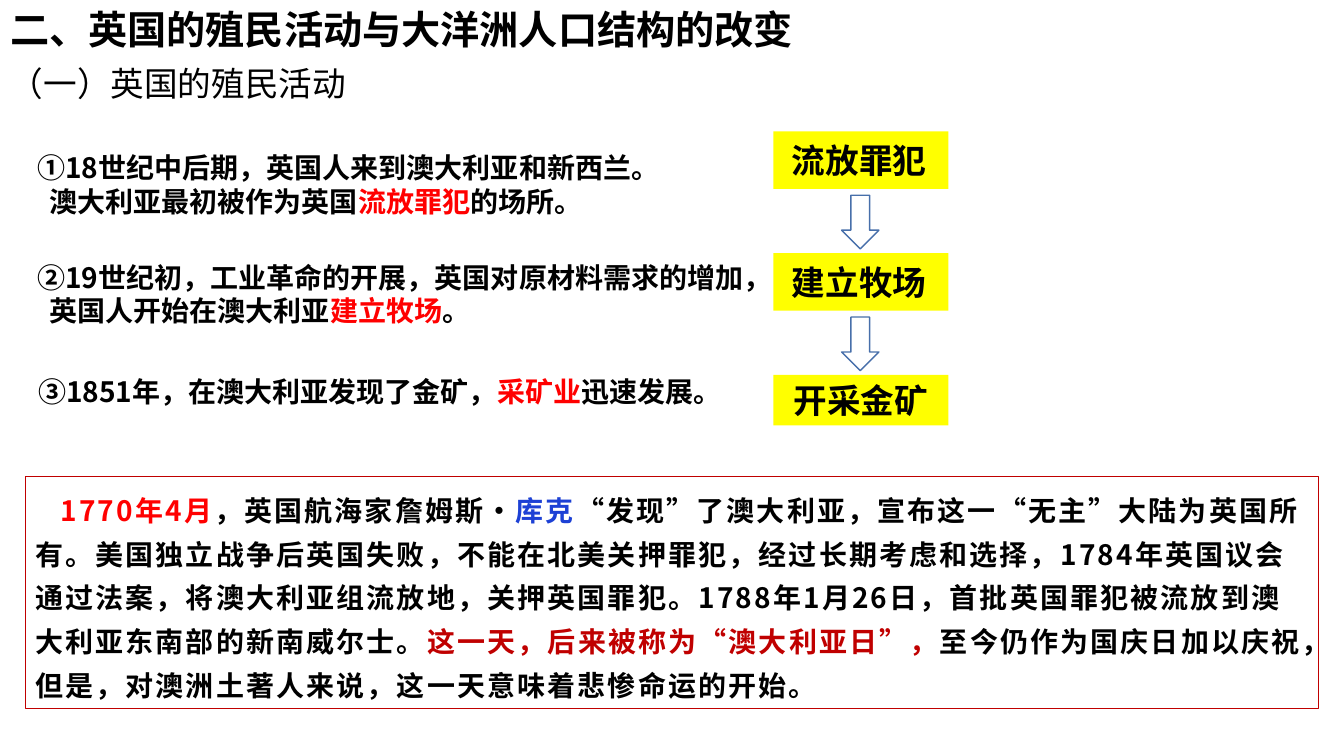
from lxml.etree import SubElement
from pptx import Presentation
from pptx.dml.color import RGBColor
from pptx.enum.shapes import MSO_SHAPE
from pptx.enum.text import MSO_ANCHOR, MSO_AUTO_SIZE, PP_ALIGN
from pptx.oxml.ns import qn
from pptx.util import Cm, Pt

FONT = "Noto Sans CJK SC"
COLORS = {
    "black": "000000",
    "white": "FFFFFF",
    "red": "FF0000",
    "dark": "C00000",
    "blue": "1D41D5",
    "yellow": "FFFF00",
    "steel": "476FAA",
}
STEPS = [("流放罪犯", 1.45, 0.34), ("建立牧场", 1.45, 0.34),
         ("开采金矿", 1.27, 0.25)]
# Each point: left, top, width, height, wrap, paragraphs of (text, colour)
POINTS = [
    (0.69, 3.68, 16.1, 1.96, True, [
        [("①18世纪中后期，英国人来到澳大利亚和新西兰。", "black")],
        [("澳大利亚最初被作为英国", "black"), ("流放罪犯", "red"),
         ("的场所。", "black")]]),
    (0.69, 6.43, 18.64, 1.96, True, [
        [("②19世纪初，工业革命的开展，英国对原材料需求的增加，", "black")],
        [("英国人开始在澳大利亚", "black"), ("建立牧场", "red"),
         ("。", "black")]]),
    (0.71, 9.32, 17.53, 1.12, False, [
        [("③1851年，在澳大利亚发现了金矿，", "black"), ("采矿业", "red"),
         ("迅速发展。", "black")]]),
]
STORY = [
    ("1770年4月", "red"),
    ("，英国航海家詹姆斯·", "black"),
    ("库克", "blue"),
    ("“发现”了澳大利亚，宣布这一“无主”大陆为英国所有。美国独立战争后英国失败，"
     "不能在北美关押罪犯，经过长期考虑和选择，1784年英国议会通过法案，"
     "将澳大利亚组流放地，关押英国罪犯。1788年1月26日，"
     "首批英国罪犯被流放到澳大利亚东南部的新南威尔士。", "black"),
    ("这一天，后来被称为“澳大利亚日”，", "dark"),
    ("至今仍作为国庆日加以庆祝，但是，对澳洲土著人来说，"
     "这一天意味着悲惨命运的开始。", "black"),
]


def rgb(name):
    return RGBColor.from_string(COLORS[name])


def style(run, size, color="black", bold=True):
    font = run.font
    font.name, font.size, font.bold = FONT, Pt(size), bold
    font.color.rgb = rgb(color)
    SubElement(run._r.get_or_add_rPr(), qn("a:ea")).set("typeface", FONT)


def add_runs(para, parts, size, bold=True):
    for text, color in parts:
        run = para.add_run()
        run.text = text
        style(run, size, color, bold)


def indent(para, size):
    props = para._p.get_or_add_pPr()
    props.set("marL", "0")
    props.set("indent", str(int(size)))


def add_title(slide, text):
    title = slide.shapes.title
    title.left, title.top = Cm(0), Cm(0)
    title.width, title.height = Cm(26.21), Cm(1.45)
    frame = title.text_frame
    frame.text = text
    frame.vertical_anchor = MSO_ANCHOR.TOP
    frame.auto_size = MSO_AUTO_SIZE.NONE
    frame.paragraphs[0].alignment = PP_ALIGN.LEFT
    style(frame.paragraphs[0].runs[0], 28)


def add_note(slide, left, top, width, height, wrap, lines, size=20, bold=True):
    box = slide.shapes.add_textbox(Cm(left), Cm(top), Cm(width), Cm(height))
    frame = box.text_frame
    frame.word_wrap = wrap
    for i, parts in enumerate(lines):
        para = frame.add_paragraph() if i else frame.paragraphs[0]
        add_runs(para, parts, size, bold)
        if i:
            indent(para, Cm(0.31))


def add_form(slide, kind, left, top, width, height, fill=None, line=None,
             weight=1):
    shape = slide.shapes.add_shape(kind, Cm(left), Cm(top), Cm(width),
                                   Cm(height))
    shape.shadow.inherit = False
    if fill:
        shape.fill.solid()
        shape.fill.fore_color.rgb = rgb(fill)
    else:
        shape.fill.background()
    if line:
        shape.line.color.rgb = rgb(line)
        shape.line.width = Pt(weight)
    else:
        shape.line.fill.background()
    return shape


def add_step(slide, top, text, height, margin):
    box = add_form(slide, MSO_SHAPE.RECTANGLE, 19.49, top, 4.41, height,
                   "yellow")
    frame = box.text_frame
    frame.text = text
    frame.margin_right = Cm(margin)
    frame.vertical_anchor = MSO_ANCHOR.MIDDLE
    frame.paragraphs[0].alignment = PP_ALIGN.CENTER
    style(frame.paragraphs[0].runs[0], 24)


def add_story(slide):
    panel = add_form(slide, MSO_SHAPE.RECTANGLE, 0.64, 12.01, 32.59, 5.84,
                     line="dark", weight=0.75)
    frame = panel.text_frame
    frame.word_wrap = True
    frame.vertical_anchor = MSO_ANCHOR.MIDDLE
    para = frame.paragraphs[0]
    para.alignment = PP_ALIGN.LEFT
    para.line_spacing, para.space_after = 1.3, Pt(10)
    indent(para, Cm(0.64))
    add_runs(para, STORY, 20)
    for run in para.runs:
        run._r.get_or_add_rPr().set("spc", "150")


def main():
    deck = Presentation()
    deck.slide_width, deck.slide_height = Cm(33.87), Cm(19.05)
    slide = deck.slides.add_slide(deck.slide_layouts[5])

    # Headings
    add_title(slide, "二、英国的殖民活动与大洋洲人口结构的改变")
    add_note(slide, 0, 1.45, 9.93, 1.27, True,
             [[("（一）英国的殖民活动", "black")]], 24, False)

    # Numbered points
    for point in POINTS:
        add_note(slide, *point)

    # Chain of steps with arrows between them
    for i, step in enumerate(STEPS):
        top = 3.31 + 3.07 * i
        add_step(slide, top, *step)
        if i:
            add_form(slide, MSO_SHAPE.DOWN_ARROW, 21.21, top - 1.46, 0.94,
                     1.35, "white", "steel")

    # Story panel
    add_story(slide)
    deck.save("out.pptx")


if __name__ == "__main__":
    main()
